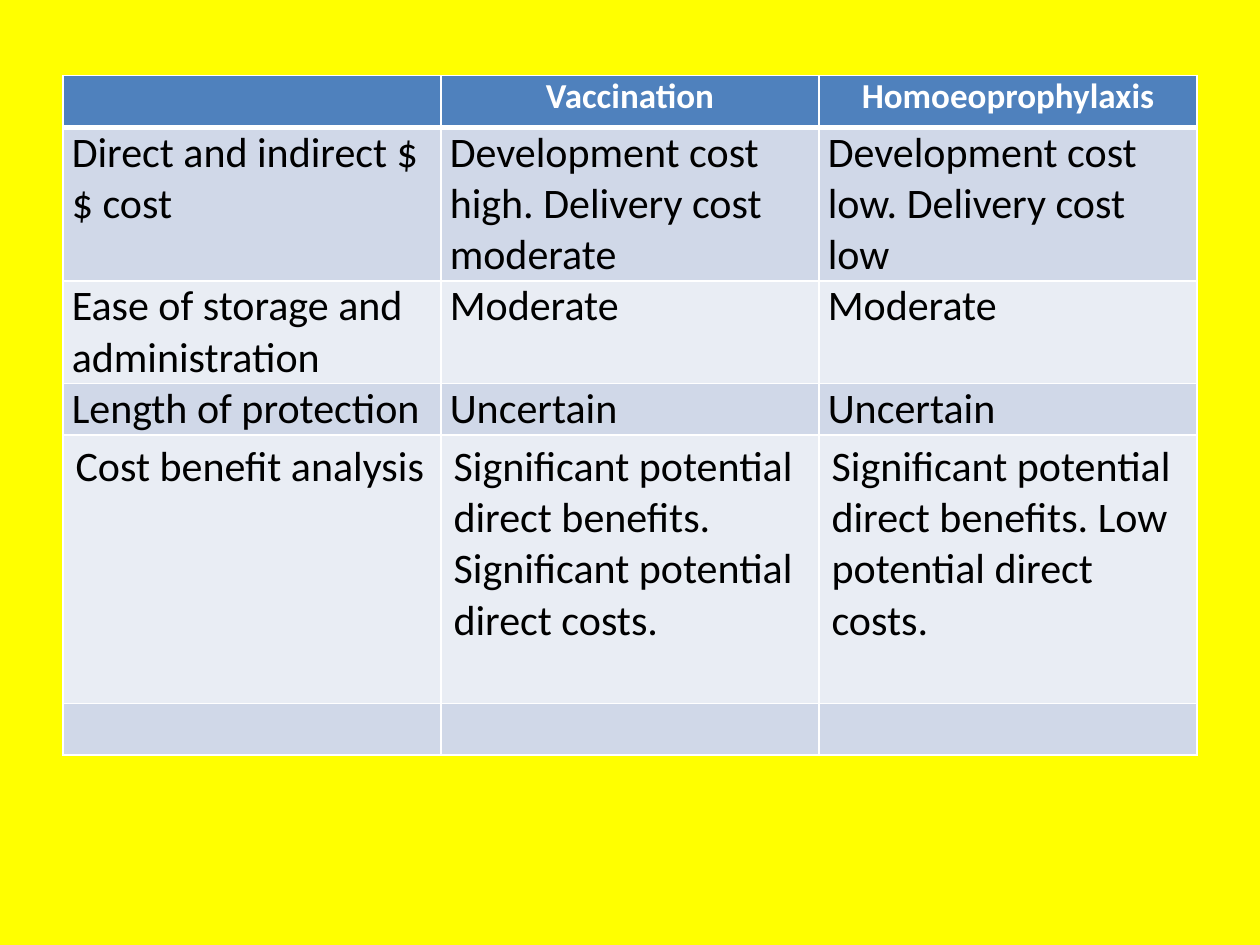
from pptx import Presentation
from pptx import util as u
from pptx.dml import color
from pptx.enum import text
from pptx.oxml import ns
from lxml import etree

COLORS = {"background": "FFFF00", "header": "4F81BD", "odd": "D0D8E8",
          "even": "E9EDF4", "border": "FFFFFF", "body": "000000"}
ROWS = [
    ("", "Vaccination", "Homoeoprophylaxis"),
    ("Direct and indirect $$ cost",
     "Development cost high. Delivery cost moderate",
     "Development cost low. Delivery cost low"),
    ("Ease of storage and administration", "Moderate", "Moderate"),
    ("Length of protection", "Uncertain", "Uncertain"),
    ("Cost benefit analysis",
     "Significant potential direct benefits. Significant potential direct costs.",
     "Significant potential direct benefits. Low potential direct costs."),
    ("", "", ""),
]
HEIGHTS = [0.41, 1.22, 0.81, 0.41, 2.13, 0.41]
ROOMY_ROW = 4  # keeps the default cell margins


def rgb(name):
    return color.RGBColor.from_string(COLORS[name])


def add_borders(cell, widths):
    """Draw cell borders; widths are points for left, right, top, bottom."""
    props = cell._tc.get_or_add_tcPr()
    for index, (side, width) in enumerate(zip("LRTB", widths)):
        line = etree.Element(ns.qn(f"a:ln{side}"), w=str(u.Pt(width)))
        fill = etree.SubElement(line, ns.qn("a:solidFill"))
        etree.SubElement(fill, ns.qn("a:srgbClr"), val=COLORS["border"])
        props.insert(index, line)


# Deck and page
deck = Presentation()
deck.slide_width, deck.slide_height = u.Inches(10), u.Inches(7.5)
page = deck.slides.add_slide(deck.slide_layouts[6])
page.background.fill.solid()
page.background.fill.fore_color.rgb = rgb("background")

# Comparison table
table = page.shapes.add_table(
    len(ROWS), 3, u.Inches(0.5), u.Inches(0.6),
    u.Inches(9), u.Inches(sum(HEIGHTS))).table
for column in table.columns:
    column.width = u.Inches(3)

for r, (labels, height) in enumerate(zip(ROWS, HEIGHTS)):
    table.rows[r].height = u.Inches(height)
    is_header = r == 0
    band = "header" if is_header else "odd" if r % 2 else "even"
    for c, label in enumerate(labels):
        cell = table.cell(r, c)
        cell.fill.solid()
        cell.fill.fore_color.rgb = rgb(band)
        # The rule under the header is thicker
        add_borders(cell, (1, 1, 3 if r == 1 else 1, 3 if is_header else 1))
        if not label:
            continue
        if r != ROOMY_ROW:
            cell.margin_left = cell.margin_right = u.Inches(0.07)
            cell.margin_top = cell.margin_bottom = 0
        cell.text = label
        para = cell.text_frame.paragraphs[0]
        para.alignment = text.PP_ALIGN.CENTER if is_header else text.PP_ALIGN.LEFT
        para.font.name = "Calibri"
        para.font.size = u.Pt(20 if is_header else 24)
        para.font.bold = is_header
        para.font.color.rgb = rgb("border" if is_header else "body")

deck.save("out.pptx")
